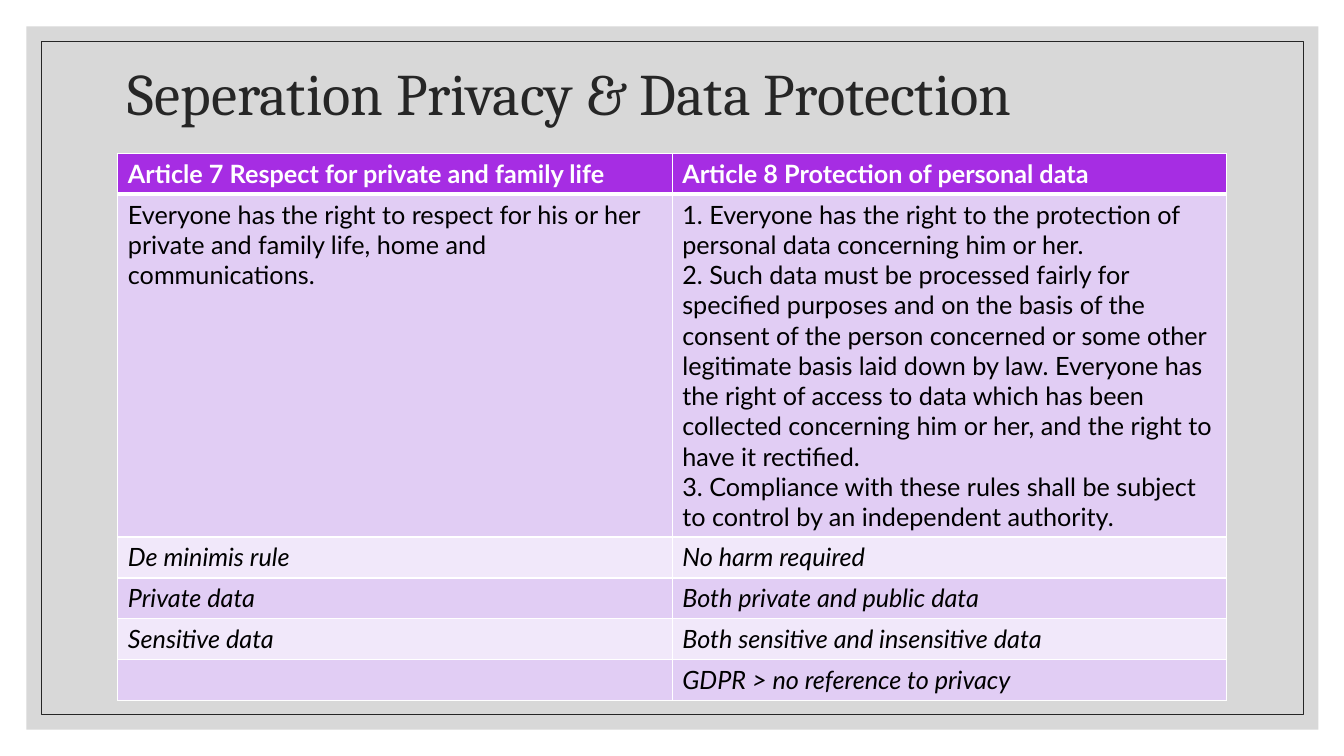
from lxml import etree
from pptx import Presentation
from pptx.dml.color import RGBColor
from pptx.enum.shapes import MSO_SHAPE
from pptx.enum.text import MSO_ANCHOR, MSO_AUTO_SIZE, PP_ALIGN
from pptx.oxml.ns import qn
from pptx.util import Pt

RECTANGLE = MSO_SHAPE.RECTANGLE
MIDDLE = MSO_ANCHOR.MIDDLE
NO_AUTOFIT = MSO_AUTO_SIZE.NONE
LEFT = PP_ALIGN.LEFT

WHITE = RGBColor(0xFF, 0xFF, 0xFF)
BLACK = RGBColor(0x00, 0x00, 0x00)
DARK = RGBColor(0x26, 0x26, 0x26)
GREY = RGBColor(0xBF, 0xBF, 0xBF)
PURPLE = RGBColor(0xA6, 0x2D, 0xE3)
LILAC = RGBColor(0xE1, 0xCD, 0xF4)
PALE_LILAC = RGBColor(0xF1, 0xE8, 0xFA)

TITLE_FONT = "Cambria"
BODY_FONT = "Lato"
ROW_HEIGHT = 29.2
ARTICLE_ROW_HEIGHT = 244.6

# Each cell is a list of paragraphs
ROWS = [
    (["Article 7 Respect for private and family life"],
     ["Article 8 Protection of personal data"]),
    (["Everyone has the right to respect for his or her private and family "
      "life, home and communications."],
     ["1. Everyone has the right to the protection of personal data "
      "concerning him or her.",
      "2. Such data must be processed fairly for specified purposes and on "
      "the basis of the consent of the person concerned or some other "
      "legitimate basis laid down by law. Everyone has the right of access "
      "to data which has been collected concerning him or her, and the right "
      "to have it rectified.",
      "3. Compliance with these rules shall be subject to control by an "
      "independent authority."]),
    (["De minimis rule"], ["No harm required"]),
    (["Private data"], ["Both private and public data"]),
    (["Sensitive data"], ["Both sensitive and insensitive data"]),
    ([], ["GDPR > no reference to privacy"]),
]


def add_run(p, text, font, size, color, bold=False, italic=False):
    r = p.add_run()
    r.text = text
    r.font.name = font
    r.font.size = Pt(size)
    r.font.color.rgb = color
    r.font.bold = bold
    r.font.italic = italic


def add_frame(s, left, top, width, height):
    sp = s.shapes.add_shape(RECTANGLE, Pt(left), Pt(top), Pt(width), Pt(height))
    sp.shadow.inherit = False
    return sp


def add_backdrop(s):
    panel = add_frame(s, 18.8, 18.8, 923, 502.4)
    panel.fill.solid()
    panel.fill.fore_color.rgb = GREY
    panel.line.fill.background()
    color = panel.fill._xPr.find(".//" + qn("a:srgbClr"))
    etree.SubElement(color, qn("a:alpha"), val="60000")

    outline = add_frame(s, 29.4, 29.4, 901.6, 481)
    outline.fill.background()
    outline.line.color.rgb = DARK
    outline.line.width = Pt(0.5)


def set_title(s, text):
    title = s.shapes.title
    title.left, title.top = Pt(84.2), Pt(34.6)
    title.width, title.height = Pt(792), Pt(69)
    # Bring the title in front of the backdrop
    title.element.getparent().append(title.element)
    tf = title.text_frame
    tf.word_wrap = True
    tf.auto_size = NO_AUTOFIT
    tf.vertical_anchor = MIDDLE
    p = tf.paragraphs[0]
    p.alignment = LEFT
    p.line_spacing = 0.9
    add_run(p, text, TITLE_FONT, 42, DARK)


def set_borders(cell, top, bottom):
    tc_pr = cell._tc.get_or_add_tcPr()
    widths = {"a:lnL": 1, "a:lnR": 1, "a:lnT": top, "a:lnB": bottom}
    for i, (tag, width) in enumerate(widths.items()):
        ln = etree.Element(qn(tag), w=str(Pt(width)))
        fill = etree.SubElement(ln, qn("a:solidFill"))
        etree.SubElement(fill, qn("a:srgbClr"), val=str(WHITE))
        tc_pr.insert(i, ln)


def fill_cell(cell, row, paragraphs):
    header = row == 0
    cell.fill.solid()
    cell.fill.fore_color.rgb = (
        PURPLE if header else LILAC if row % 2 else PALE_LILAC)
    set_borders(cell, top=3 if row == 1 else 1, bottom=3 if header else 1)
    tf = cell.text_frame
    for i, text in enumerate(paragraphs):
        p = tf.add_paragraph() if i else tf.paragraphs[0]
        add_run(p, text, BODY_FONT, 18, WHITE if header else BLACK,
                bold=header, italic=row > 1)


def add_comparison(s):
    height = ARTICLE_ROW_HEIGHT + ROW_HEIGHT * (len(ROWS) - 1)
    table = s.shapes.add_table(len(ROWS), 2, Pt(84.2), Pt(109.6),
                               Pt(792), Pt(height)).table
    for i, row in enumerate(ROWS):
        table.rows[i].height = Pt(ARTICLE_ROW_HEIGHT if i == 1 else ROW_HEIGHT)
        for j, paragraphs in enumerate(row):
            fill_cell(table.cell(i, j), i, paragraphs)


def main():
    prs = Presentation()
    prs.slide_width, prs.slide_height = Pt(960), Pt(540)
    s = prs.slides.add_slide(prs.slide_layouts[5])
    s.background.fill.solid()
    s.background.fill.fore_color.rgb = WHITE

    add_backdrop(s)
    set_title(s, "Seperation Privacy & Data Protection")
    add_comparison(s)

    prs.save("out.pptx")


if __name__ == "__main__":
    main()
